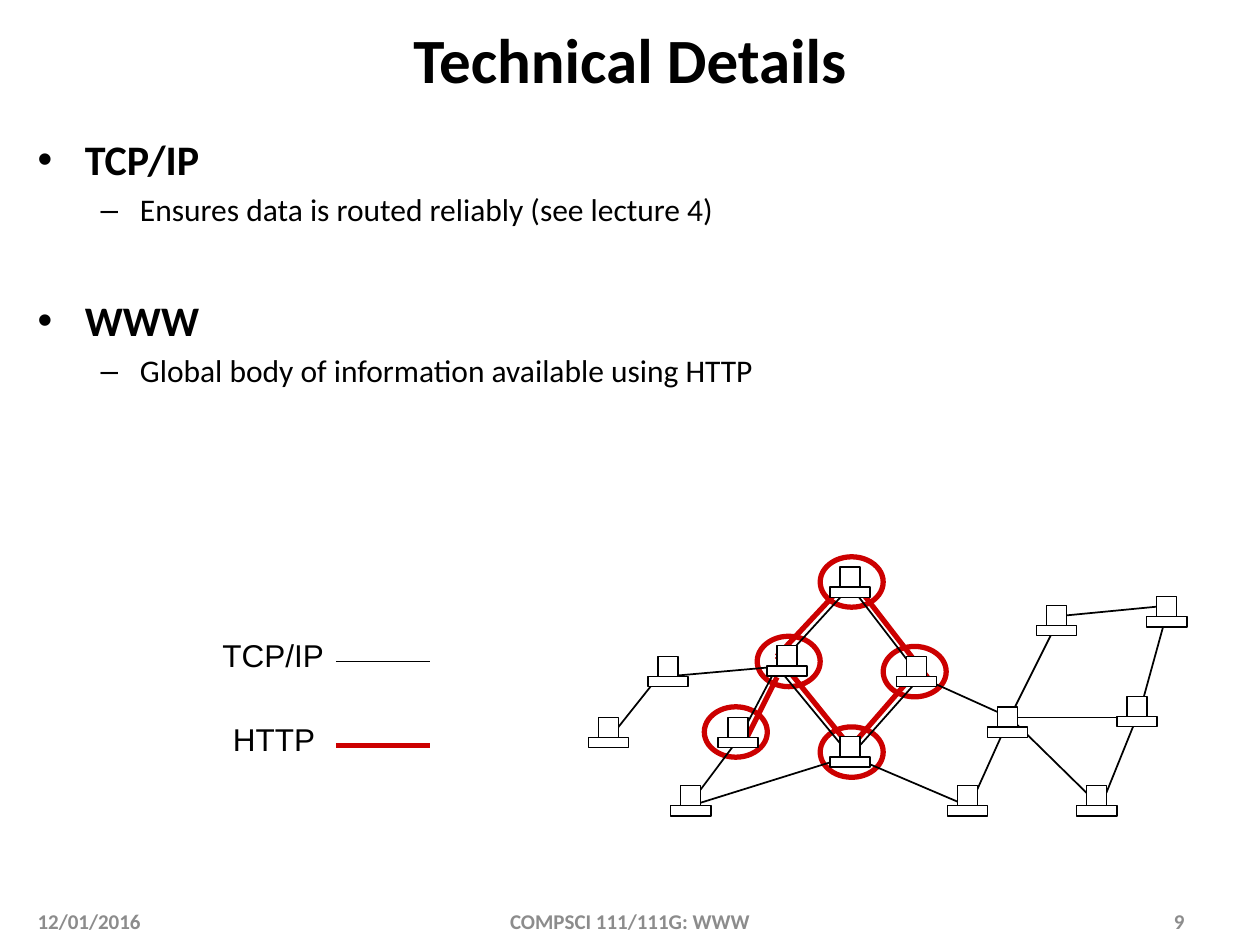
from itertools import pairwise

from lxml import etree
from pptx import Presentation
from pptx import util as u
from pptx.dml.color import RGBColor
from pptx.enum import shapes, text
from pptx.oxml import ns

BLACK = RGBColor(0, 0, 0)
WHITE = RGBColor(255, 255, 255)
RED = RGBColor(204, 0, 0)
GREY = RGBColor(140, 140, 140)
LEFT, MID, RIGHT = text.PP_ALIGN.LEFT, text.PP_ALIGN.CENTER, text.PP_ALIGN.RIGHT
RECT, OVAL = shapes.MSO_SHAPE.RECTANGLE, shapes.MSO_SHAPE.OVAL


class Pen:
    def __init__(self, slide, font="Calibri"):
        self.slide = slide
        self.font = font

    def style(self, para, size, color, bold, font=None):
        for run in para.runs:
            run.font.name = font or self.font
            run.font.size = u.Pt(size)
            run.font.bold = bold
            run.font.color.rgb = color

    def frame(self, box, wrap=True, anchor=text.MSO_ANCHOR.TOP):
        frame = self.slide.shapes.add_textbox(*map(u.Pt, box)).text_frame
        frame.word_wrap = wrap
        frame.vertical_anchor = anchor
        return frame

    def label(self, words, box, size, color=BLACK, bold=True, align=LEFT):
        frame = self.frame(box, anchor=text.MSO_ANCHOR.MIDDLE)
        frame.text = words
        frame.paragraphs[0].alignment = align
        self.style(frame.paragraphs[0], size, color, bold)

    def key(self, words, box, y, color, width):
        frame = self.frame(box, wrap=False)
        frame.auto_size = text.MSO_AUTO_SIZE.SHAPE_TO_FIT_TEXT
        frame.text = words
        self.style(frame.paragraphs[0], 18, BLACK, False, "Arial")
        self.line((192, y), (246, y), color, width)

    def list(self, items, box):
        frame = self.frame(box)
        for i, (words, level, gap) in enumerate(items):
            para = frame.add_paragraph() if i else frame.paragraphs[0]
            mark, size, left, hang = (("•", 24, 27, 27), ("–", 18, 58.5, 22.5))[level]
            para.text = words
            para.level = level
            para.space_before = u.Pt(gap)
            self.style(para, size, BLACK, level == 0)
            props = para._p.get_or_add_pPr()
            props.set("marL", str(u.Pt(left)))
            props.set("indent", str(-u.Pt(hang)))
            etree.SubElement(props, ns.qn("a:buFont")).set("typeface", "Arial")
            etree.SubElement(props, ns.qn("a:buChar")).set("char", mark)

    def line(self, start, end, color, width):
        link = self.slide.shapes.add_connector(
            shapes.MSO_CONNECTOR.STRAIGHT, *map(u.Pt, (*start, *end)))
        link.line.color.rgb = color
        link.line.width = u.Pt(width)
        etree.SubElement(link._element.spPr, ns.qn("a:effectLst"))

    def trail(self, points, color, width):
        for start, end in pairwise(points):
            self.line(start, end, color, width)

    def shape(self, kind, box, color, width, fill=None):
        item = self.slide.shapes.add_shape(kind, *map(u.Pt, box))
        item.shadow.inherit = False
        item.line.color.rgb = color
        item.line.width = u.Pt(width)
        if fill is None:
            item.fill.background()
        else:
            item.fill.solid()
            item.fill.fore_color.rgb = fill

    def ring(self, x, y):
        self.shape(OVAL, (x, y, 36, 28.8), RED, 3)

    def host(self, x, y):
        self.shape(RECT, (x, y, 11.5, 11.5), BLACK, 0.75, WHITE)
        self.shape(RECT, (x - 5.75, y + 11.5, 23, 5.75), BLACK, 0.75, WHITE)


ITEMS = [
    ("TCP/IP", 0, 5),
    ("Ensures data is routed reliably (see lecture 4)", 1, 3.5),
    ("WWW", 0, 38),
    ("Global body of information available using HTTP", 1, 3.5),
]
NODES = {
    "A": (349, 421), "B": (376, 387), "C": (444, 381), "D": (486, 335),
    "E": (526, 387), "F": (486, 432), "G": (423, 421), "H": (393, 461),
    "I": (554, 461), "J": (577, 410), "K": (629, 461), "L": (652, 404),
    "M": (668, 346), "N": (606, 352), "P": (652, 410),
}
ROUTES = ["ABCDEFCGHFIJKLMNJE", "JP"]
WEB = [
    [(427, 421), (444, 387)],
    [(444, 375), (486, 427), (526, 381)],
    [(530, 387), (486, 330), (444, 375)],
]
RINGS = [(432.7, 363.6), (468.7, 415.4), (504.7, 369.4), (468.7, 318.2), (402.5, 403.9)]
HOSTS = [
    (376, 375), (416, 410), (444, 369), (480, 324), (661, 341), (644, 398), (547, 449),
    (598, 346), (621, 449), (570, 404), (518, 375), (389, 449), (480, 421), (342, 410),
]


def main():
    deck = Presentation()
    deck.slide_width, deck.slide_height = u.Pt(720), u.Pt(540)
    pen = Pen(deck.slides.add_slide(deck.slide_layouts[6]))

    for points in WEB:
        pen.trail(points, RED, 3)
    for spot in RINGS:
        pen.ring(*spot)
    pen.label("Technical Details", (7, 9, 706, 49), 36, align=MID)
    pen.list(ITEMS, (14.4, 73, 691, 430))
    for route in ROUTES:
        pen.trail([NODES[name] for name in route], BLACK, 1)
    for spot in HOSTS:
        pen.host(*spot)

    pen.key("TCP/IP", (120, 360, 73, 29), 378, BLACK, 1)
    pen.key("HTTP", (126, 408, 62, 29), 426, RED, 3)

    pen.label("12/01/2016", (14.4, 517, 168, 19), 12, GREY)
    pen.label("COMPSCI 111/111G: WWW", (246, 517, 228, 19), 12, GREY, align=MID)
    pen.label("9", (516, 517, 168, 19), 12, GREY, align=RIGHT)
    deck.save("out.pptx")


if __name__ == "__main__":
    main()
